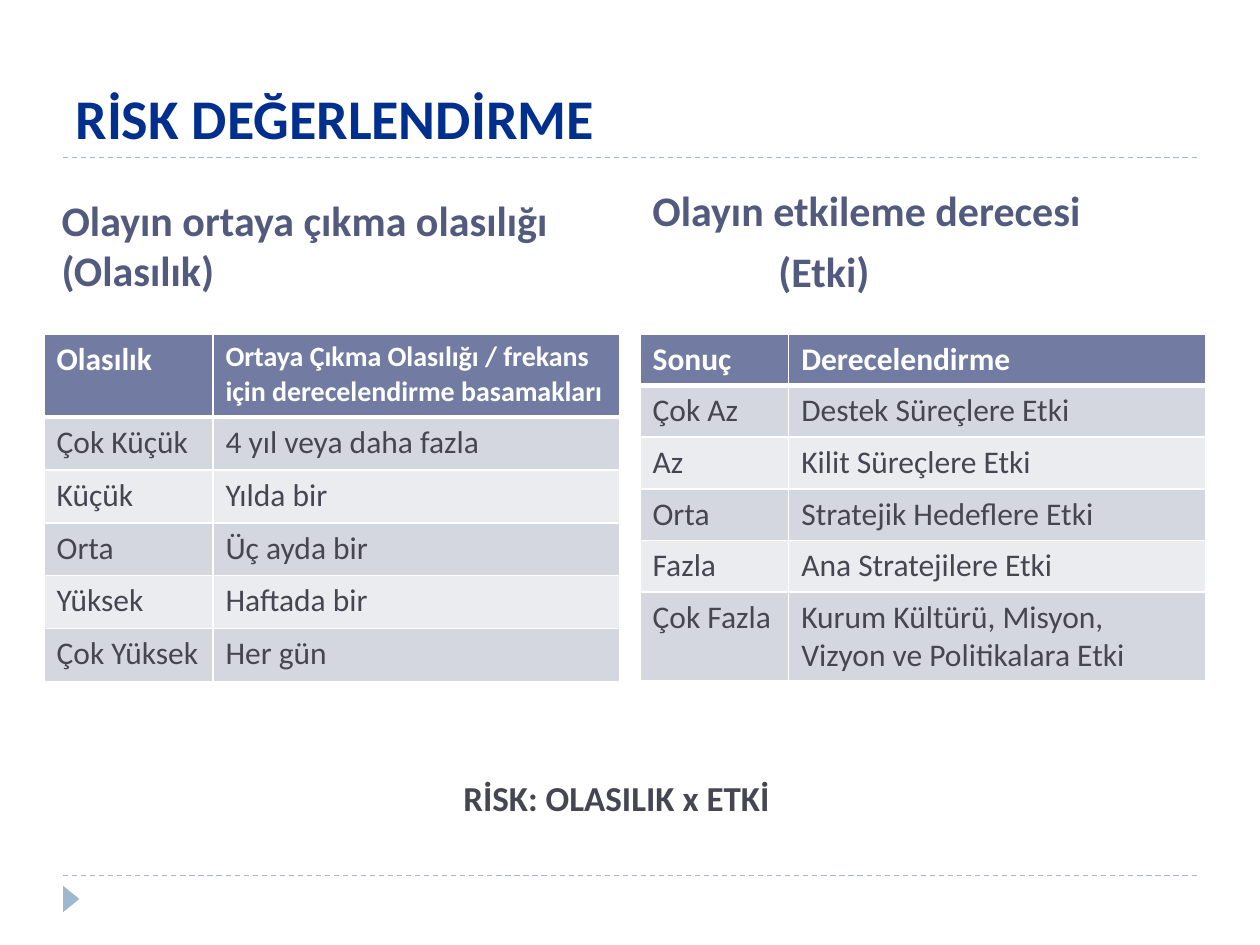
from lxml.etree import fromstring
from pptx import Presentation
from pptx.dml.color import RGBColor
from pptx.enum.dml import MSO_LINE
from pptx.enum.shapes import MSO_CONNECTOR, MSO_SHAPE
from pptx.enum.text import MSO_ANCHOR, PP_ALIGN
from pptx.oxml.ns import nsdecls, qn
from pptx.util import Inches, Pt

NAVY = RGBColor(0x00, 0x2F, 0x8E)
SLATE = RGBColor(0x52, 0x5B, 0x7E)
INK = RGBColor(0x46, 0x46, 0x53)
WHITE = RGBColor(0xFF, 0xFF, 0xFF)
HEADER = RGBColor(0x72, 0x7C, 0xA3)
BANDS = [RGBColor(0xEB, 0xEC, 0xF0), RGBColor(0xD5, 0xD7, 0xE0)]
ACCENT = RGBColor(0x9F, 0xB8, 0xCD)

TITLE = "RİSK DEĞERLENDİRME"
FORMULA = "RİSK: OLASILIK x ETKİ"
HEADINGS = [
    ((0.39, 1.47, 4.42, 0.92), [("Olayın ortaya çıkma olasılığı (Olasılık)", 0)]),
    ((5.08, 1.47, 4.33, 0.93), [("Olayın etkileme derecesi", 0), ("(Etki)", 1)]),
]
TABLES = [
    {
        "left": 0.35,
        "cols": [1.34, 3.23],
        "heights": [0.66] + [0.42] * 5,
        "header_sizes": [18, 16],
        "rows": [
            ("Olasılık", "Ortaya Çıkma Olasılığı / frekans için derecelendirme basamakları"),
            ("Çok Küçük", "4 yıl veya daha fazla"),
            ("Küçük", "Yılda bir"),
            ("Orta", "Üç ayda bir"),
            ("Yüksek", "Haftada bir"),
            ("Çok Yüksek", "Her gün"),
        ],
    },
    {
        "left": 5.08,
        "cols": [1.18, 3.31],
        "heights": [0.41] * 5 + [0.63],
        "header_sizes": [18, 18],
        "rows": [
            ("Sonuç", "Derecelendirme"),
            ("Çok Az", "Destek Süreçlere Etki"),
            ("Az", "Kilit Süreçlere Etki"),
            ("Orta", "Stratejik Hedeflere Etki"),
            ("Fazla", "Ana Stratejilere Etki"),
            ("Çok Fazla", "Kurum Kültürü, Misyon, Vizyon ve Politikalara Etki"),
        ],
    },
]
TABLE_TOP = 2.65
RULES = [1.25, 6.95]


def write(p, text, size, color, bold=True):
    r = p.add_run()
    r.text = text
    for name, value in {"name": "Calibri", "size": Pt(size), "bold": bold}.items():
        setattr(r.font, name, value)
    r.font.color.rgb = color


def add_text(s, box, lines, size, color, wrap=True, anchor=MSO_ANCHOR.TOP, before=0):
    tf = s.shapes.add_textbox(*map(Inches, box)).text_frame
    tf.word_wrap = wrap
    tf.vertical_anchor = anchor
    for i, (text, indent) in enumerate(lines):
        p = tf.add_paragraph() if i else tf.paragraphs[0]
        p.space_before = Pt(before)
        if indent:
            p._p.get_or_add_pPr().set("marL", str(Inches(indent)))
        write(p, text, size, color)


def set_borders(cell, row):
    widths = {"L": 1, "R": 1, "T": 3 if row == 1 else 1, "B": 1 if row else 3}
    tcPr = cell._tc.get_or_add_tcPr()
    for i, (side, width) in enumerate(widths.items()):
        tcPr.insert(i, fromstring(
            f'<a:ln{side} {nsdecls("a")} w="{Pt(width)}"><a:solidFill>'
            f'<a:srgbClr val="{WHITE}"/></a:solidFill></a:ln{side}>'))


def add_table(s, left, cols, heights, header_sizes, rows):
    table = s.shapes.add_table(
        len(rows), len(cols), Inches(left), Inches(TABLE_TOP),
        Inches(sum(cols)), Inches(sum(heights))).table
    for column, width in zip(table.columns, cols):
        column.width = Inches(width)
    for i, (texts, height) in enumerate(zip(rows, heights)):
        table.rows[i].height = Inches(height)
        for j, text in enumerate(texts):
            cell = table.cell(i, j)
            cell.fill.solid()
            cell.fill.fore_color.rgb = BANDS[i % 2] if i else HEADER
            set_borders(cell, i)
            write(cell.text_frame.paragraphs[0], text,
                  18 if i else header_sizes[j], INK if i else WHITE, bold=i == 0)


def add_rule(s, y):
    rule = s.shapes.add_connector(
        MSO_CONNECTOR.STRAIGHT, Inches(0.5), Inches(y), Inches(9.5), Inches(y))
    rule.line.color.rgb = ACCENT
    rule.line.width = Pt(0.75)
    rule.line.dash_style = MSO_LINE.DASH
    rule._element.spPr.append(rule._element.makeelement(qn("a:effectLst")))


def add_marker(s):
    marker = s.shapes.add_shape(
        MSO_SHAPE.ISOSCELES_TRIANGLE, *map(Inches, (0.46, 7.07, 0.21, 0.13)))
    marker.rotation = 90
    marker.shadow.inherit = False
    marker.fill.solid()
    marker.fill.fore_color.rgb = ACCENT
    marker.line.fill.background()


def add_title(s):
    title = s.shapes.title
    box = {"left": 0.5, "top": 0.17, "width": 9, "height": 1.08}
    for name, value in box.items():
        setattr(title, name, Inches(value))
    tf = title.text_frame
    tf.vertical_anchor = MSO_ANCHOR.BOTTOM
    p = tf.paragraphs[0]
    p.alignment = PP_ALIGN.LEFT
    write(p, TITLE, 32, NAVY)


def main():
    """Build the risk assessment slide."""
    prs = Presentation()
    prs.slide_width, prs.slide_height = Inches(10), Inches(7.5)
    s = prs.slides.add_slide(prs.slide_layouts[5])
    for y in RULES:
        add_rule(s, y)
    add_marker(s)
    add_title(s)
    for box, lines in HEADINGS:
        add_text(s, box, lines, 24, SLATE, anchor=MSO_ANCHOR.BOTTOM, before=6)
    for table in TABLES:
        add_table(s, **table)
    add_text(s, (3.58, 6.11, 2.66, 0.44), [(FORMULA, 0)], 20, INK, wrap=False)
    prs.save("out.pptx")


if __name__ == "__main__":
    main()
